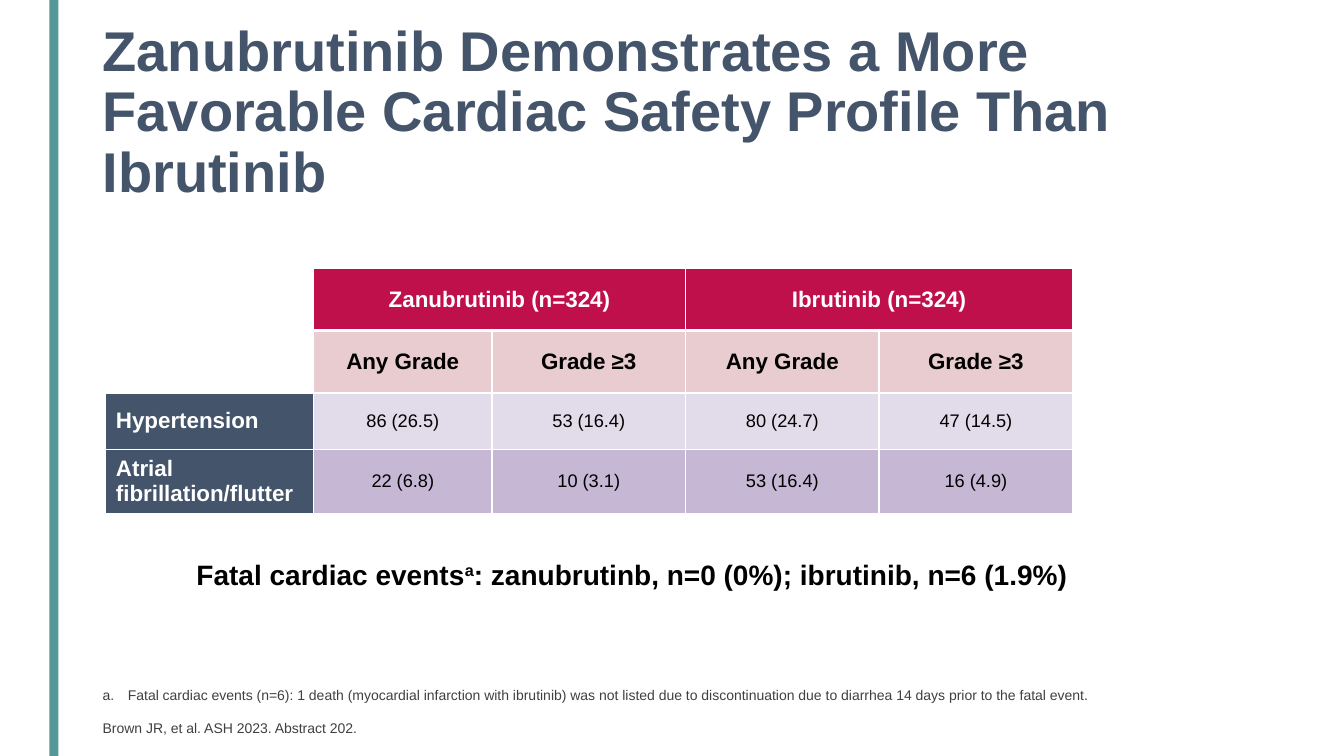
from dataclasses import dataclass

from lxml.etree import SubElement
from pptx import Presentation
from pptx.dml.color import RGBColor
from pptx.enum.shapes import MSO_SHAPE
from pptx.enum.text import MSO_ANCHOR as Anchor, PP_ALIGN as Align
from pptx.oxml.ns import qn
from pptx.util import Inches, Pt

FONT = "Arial"
WHITE = RGBColor(0xFF, 0xFF, 0xFF)
BLACK = RGBColor(0, 0, 0)
GRAY = RGBColor(0x40, 0x40, 0x40)
SLATE = RGBColor(0x44, 0x54, 0x6A)
TEAL = RGBColor(0x54, 0x98, 0x97)
CRIMSON = RGBColor(0xBF, 0x10, 0x4B)
PINK = RGBColor(0xE8, 0xCC, 0xD0)
LILAC = RGBColor(0xE2, 0xDB, 0xEA)
PURPLE = RGBColor(0xC6, 0xB7, 0xD5)


@dataclass
class TextStyle:
    size: float
    color: RGBColor
    bold: bool = False


@dataclass
class CellStyle:
    text: TextStyle
    fill: RGBColor
    align: Align = Align.CENTER


@dataclass
class Event:
    name: str
    counts: list[str]
    fill: RGBColor


TITLE = TextStyle(40, SLATE, True)
STATEMENT = TextStyle(20, BLACK, True)
NOTE = TextStyle(10, GRAY)
COUNT = TextStyle(13, BLACK)
DRUG_CELL = CellStyle(TextStyle(16, WHITE, True), CRIMSON)
GRADE_CELL = CellStyle(TextStyle(16, BLACK, True), PINK)
EVENT_CELL = CellStyle(TextStyle(16, WHITE, True), SLATE, Align.LEFT)

DRUGS = ["Zanubrutinib (n=324)", "Ibrutinib (n=324)"]
GRADES = ["Any Grade", "Grade\u00a0≥3"]
EVENTS = [
    Event("Hypertension", ["86 (26.5)", "53 (16.4)", "80 (24.7)", "47 (14.5)"], LILAC),
    Event("Atrial fibrillation/flutter",
          ["22 (6.8)", "10 (3.1)", "53 (16.4)", "16 (4.9)"], PURPLE),
]
COLUMN_WIDTHS = [2.06, 1.77, 1.92, 1.92, 1.92]
ROW_HEIGHTS = [0.62, 0.62, 0.56, 0.56]


def style_runs(paragraph, style: TextStyle) -> None:
    for run in paragraph.runs:
        run.font.name = FONT
        run.font.size = Pt(style.size)
        run.font.bold = style.bold
        run.font.color.rgb = style.color


def add_text(slide, left: float, top: float, width: float, height: float,
             lines: list[str], style: TextStyle):
    frame = slide.shapes.add_textbox(
        Inches(left), Inches(top), Inches(width), Inches(height)).text_frame
    frame.word_wrap = True
    frame.text = "\n".join(lines)
    for paragraph in frame.paragraphs:
        style_runs(paragraph, style)
    return frame


def set_borders(cell, bottom: float = 1, top: float = 1) -> None:
    properties = cell._tc.get_or_add_tcPr()
    for side, width in (("L", 1), ("R", 1), ("T", top), ("B", bottom)):
        line = SubElement(properties, qn(f"a:ln{side}"), w=str(Pt(width)))
        color = SubElement(SubElement(line, qn("a:solidFill")), qn("a:srgbClr"))
        color.set("val", str(WHITE))


def fill_cell(cell, text: str, style: CellStyle) -> None:
    cell.fill.solid()
    cell.fill.fore_color.rgb = style.fill
    cell.vertical_anchor = Anchor.MIDDLE
    cell.text_frame.text = text
    paragraph = cell.text_frame.paragraphs[0]
    paragraph.alignment = style.align
    style_runs(paragraph, style.text)


def add_safety_table(slide) -> None:
    table = slide.shapes.add_table(
        len(ROW_HEIGHTS), len(COLUMN_WIDTHS), Inches(1.05), Inches(2.66),
        Inches(sum(COLUMN_WIDTHS)), Inches(sum(ROW_HEIGHTS))).table
    table.horz_banding = False
    for column, width in zip(table.columns, COLUMN_WIDTHS):
        column.width = Inches(width)
    for index, (row, height) in enumerate(zip(table.rows, ROW_HEIGHTS)):
        row.height = Inches(height)
        for cell in row.cells:
            set_borders(cell, bottom=3 if index == 0 else 1,
                        top=3 if index == 1 else 1)
            cell.fill.background()

    # Column headings
    for index, drug in enumerate(DRUGS):
        first = 1 + index * len(GRADES)
        heading = table.cell(0, first)
        heading.merge(table.cell(0, first + len(GRADES) - 1))
        fill_cell(heading, drug, DRUG_CELL)
        for column, grade in enumerate(GRADES, first):
            fill_cell(table.cell(1, column), grade, GRADE_CELL)

    # Event rows
    for row, event in enumerate(EVENTS, 2):
        fill_cell(table.cell(row, 0), event.name, EVENT_CELL)
        for column, count in enumerate(event.counts, 1):
            fill_cell(table.cell(row, column), count, CellStyle(COUNT, event.fill))


def add_statement(slide) -> None:
    frame = add_text(slide, 1.85, 5.48, 9.21, 0.44, ["Fatal cardiac events"], STATEMENT)
    paragraph = frame.paragraphs[0]
    marker = paragraph.add_run()
    marker.text = "a"
    paragraph.add_run().text = ": zanubrutinb, n=0 (0%); ibrutinib, n=6 (1.9%)"
    style_runs(paragraph, STATEMENT)
    marker._r.get_or_add_rPr().set("baseline", "30000")


def add_footnotes(slide) -> None:
    frame = add_text(slide, 0.92, 6.76, 10.07, 0.6, [
        "Fatal cardiac events (n=6): 1 death (myocardial infarction with ibrutinib) was not "
        "listed due to discontinuation due to diarrhea 14 days prior to the fatal event.",
        "Brown JR, et al. ASH 2023. Abstract 202.",
    ], NOTE)
    note, citation = frame.paragraphs
    properties = note._p.get_or_add_pPr()
    properties.set("marL", str(Inches(0.25)))
    properties.set("indent", str(-Inches(0.25)))
    SubElement(properties, qn("a:buFont"), typeface=FONT)
    SubElement(properties, qn("a:buAutoNum"), type="alphaLcPeriod")
    citation.space_before = Pt(12)


def main() -> None:
    deck = Presentation()
    deck.slide_width, deck.slide_height = Inches(13.33), Inches(7.5)
    slide = deck.slides.add_slide(deck.slide_layouts[6])

    # Side stripe
    stripe = slide.shapes.add_shape(
        MSO_SHAPE.RECTANGLE, Inches(0.49), 0, Inches(0.09), deck.slide_height)
    stripe.shadow.inherit = False
    stripe.fill.solid()
    stripe.fill.fore_color.rgb = TEAL
    stripe.line.fill.background()

    # Title
    title = add_text(slide, 0.92, 0.4, 11.5, 1.45, [
        "Zanubrutinib Demonstrates a More Favorable Cardiac Safety Profile Than Ibrutinib",
    ], TITLE)
    title.vertical_anchor = Anchor.MIDDLE
    title.paragraphs[0].line_spacing = 0.9

    # Body and notes
    add_footnotes(slide)
    add_safety_table(slide)
    add_statement(slide)
    deck.save("out.pptx")


if __name__ == "__main__":
    main()
